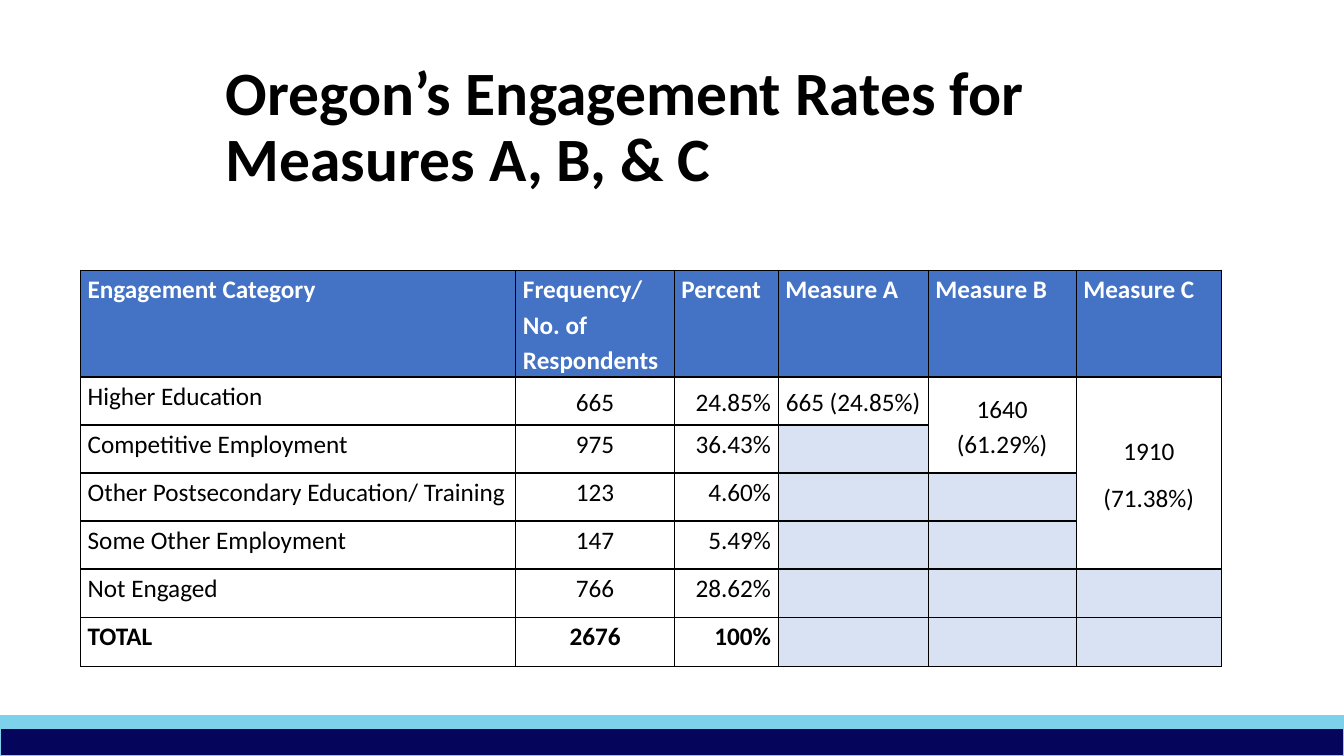
from dataclasses import dataclass

from lxml import etree
from pptx import Presentation
from pptx.dml.color import RGBColor
from pptx.enum.shapes import MSO_SHAPE
from pptx.enum.text import MSO_ANCHOR, PP_ALIGN
from pptx.oxml.ns import qn
from pptx.slide import Slide
from pptx.table import Table, _Cell
from pptx.text.text import TextFrame
from pptx.util import Cm, Pt

RECTANGLE = MSO_SHAPE.RECTANGLE
LEFT, CENTER, RIGHT = PP_ALIGN.LEFT, PP_ALIGN.CENTER, PP_ALIGN.RIGHT
TOP, MIDDLE = MSO_ANCHOR.TOP, MSO_ANCHOR.MIDDLE


@dataclass(frozen=True)
class Theme:
    font: str = "Calibri"
    title_size: int = 44
    table_size: int = 18
    ink: str = "000000"
    paper: str = "FFFFFF"
    header: str = "4472C4"
    shaded: str = "D9E2F3"
    sky: str = "7ED1EB"
    navy: str = "05065B"


@dataclass(frozen=True)
class Column:
    heading: str
    width: float
    align: PP_ALIGN


@dataclass(frozen=True)
class Category:
    name: str
    frequency: str
    percent: str
    height: float = 1.21
    bold: bool = False


@dataclass(frozen=True)
class Measure:
    result: str
    categories_counted: int


@dataclass(frozen=True)
class Band:
    top: float
    height: float
    color: str


THEME = Theme()
SLIDE_WIDTH, SLIDE_HEIGHT = 33.87, 19.05
HEADER_HEIGHT = 2.69
TABLE_LEFT, TABLE_TOP = 2.03, 6.81

COLUMNS = [
    Column("Engagement Category", 10.97, LEFT),
    Column("Frequency/ No. of Respondents", 3.99, CENTER),
    Column("Percent", 2.62, RIGHT),
    Column("Measure A", 3.78, CENTER),
    Column("Measure B", 3.73, CENTER),
    Column("Measure C", 3.66, CENTER),
]
CATEGORIES = [
    Category("Higher Education", "665", "24.85%"),
    Category("Competitive Employment", "975", "36.43%"),
    Category("Other Postsecondary Education/ Training", "123", "4.60%"),
    Category("Some Other Employment", "147", "5.49%"),
    Category("Not Engaged", "766", "28.62%"),
    Category("TOTAL", "2676", "100%", height=1.25, bold=True),
]
MEASURES = [
    Measure("665 (24.85%)", 1),
    Measure("1640 (61.29%)", 2),
    Measure("1910\n(71.38%)", 4),
]
FIRST_MEASURE_COLUMN = len(COLUMNS) - len(MEASURES)
BANDS = [Band(18.03, 1.02, THEME.sky), Band(18.36, 0.69, THEME.navy)]


def write(frame: TextFrame, text: str, *, size: int = THEME.table_size,
          color: str = THEME.ink, bold: bool = False, align: PP_ALIGN = LEFT,
          line_spacing: float = 1.15, space_after: int = 8) -> None:
    for index, line in enumerate(text.split("\n")):
        paragraph = frame.add_paragraph() if index else frame.paragraphs[0]
        paragraph.alignment = align
        paragraph.line_spacing = line_spacing
        paragraph.space_after = Pt(space_after)
        run = paragraph.add_run()
        run.text = line
        run.font.name = THEME.font
        run.font.size = Pt(size)
        run.font.bold = bold
        run.font.color.rgb = RGBColor.from_string(color)


def draw_band(slide: Slide, band: Band) -> None:
    strip = slide.shapes.add_shape(
        RECTANGLE, 0, Cm(band.top), Cm(SLIDE_WIDTH), Cm(band.height))
    strip.shadow.inherit = False
    strip.fill.solid()
    strip.fill.fore_color.rgb = RGBColor.from_string(band.color)
    strip.line.color.rgb = RGBColor.from_string(THEME.sky)
    strip.line.width = Pt(1)


def draw_title(slide: Slide) -> None:
    title = slide.shapes.add_textbox(Cm(5.44), Cm(1.4), Cm(25.88), Cm(3.68))
    title.text_frame.word_wrap = True
    title.text_frame.vertical_anchor = MIDDLE
    write(title.text_frame, "Oregon’s Engagement Rates for Measures A, B, & C",
          size=THEME.title_size, bold=True, line_spacing=0.9, space_after=0)


def format_cell(cell: _Cell) -> None:
    cell.margin_left = cell.margin_right = Cm(0.18)
    cell.margin_top = cell.margin_bottom = 0
    properties = cell._tc.get_or_add_tcPr()
    for side in ("a:lnL", "a:lnR", "a:lnT", "a:lnB"):
        border = etree.SubElement(properties, qn(side), w=str(Pt(1)))
        fill = etree.SubElement(border, qn("a:solidFill"))
        etree.SubElement(fill, qn("a:srgbClr"), val=THEME.ink)
    cell.fill.background()


def shade(cell: _Cell, color: str) -> None:
    cell.fill.solid()
    cell.fill.fore_color.rgb = RGBColor.from_string(color)


def fill_header(table: Table) -> None:
    for index, column in enumerate(COLUMNS):
        table.columns[index].width = Cm(column.width)
        heading = table.cell(0, index)
        shade(heading, THEME.header)
        write(heading.text_frame, column.heading, color=THEME.paper, bold=True)


def fill_categories(table: Table) -> None:
    for row, category in enumerate(CATEGORIES, start=1):
        table.rows[row].height = Cm(category.height)
        values = (category.name, category.frequency, category.percent)
        for index, value in enumerate(values):
            cell = table.cell(row, index)
            cell.vertical_anchor = MIDDLE if row == 1 and index else TOP
            write(cell.text_frame, value, bold=category.bold,
                  align=COLUMNS[index].align)


def fill_measures(table: Table) -> None:
    for index, measure in enumerate(MEASURES, start=FIRST_MEASURE_COLUMN):
        result = table.cell(1, index)
        if measure.categories_counted > 1:
            result.merge(table.cell(measure.categories_counted, index))
        result.vertical_anchor = MIDDLE
        write(result.text_frame, measure.result, align=COLUMNS[index].align)
        for row in range(measure.categories_counted + 1, len(CATEGORIES) + 1):
            shade(table.cell(row, index), THEME.shaded)


def draw_rates(slide: Slide) -> None:
    width = sum(column.width for column in COLUMNS)
    height = HEADER_HEIGHT + sum(category.height for category in CATEGORIES)
    table = slide.shapes.add_table(
        len(CATEGORIES) + 1, len(COLUMNS), Cm(TABLE_LEFT), Cm(TABLE_TOP),
        Cm(width), Cm(height)).table
    table.first_row = table.horz_banding = False
    table.rows[0].height = Cm(HEADER_HEIGHT)
    for cell in table.iter_cells():
        format_cell(cell)
    fill_header(table)
    fill_categories(table)
    fill_measures(table)


def main() -> None:
    presentation = Presentation()
    presentation.slide_width = Cm(SLIDE_WIDTH)
    presentation.slide_height = Cm(SLIDE_HEIGHT)
    slide = presentation.slides.add_slide(presentation.slide_layouts[6])
    for band in BANDS:
        draw_band(slide, band)
    draw_title(slide)
    draw_rates(slide)
    presentation.save("out.pptx")


if __name__ == "__main__":
    main()
